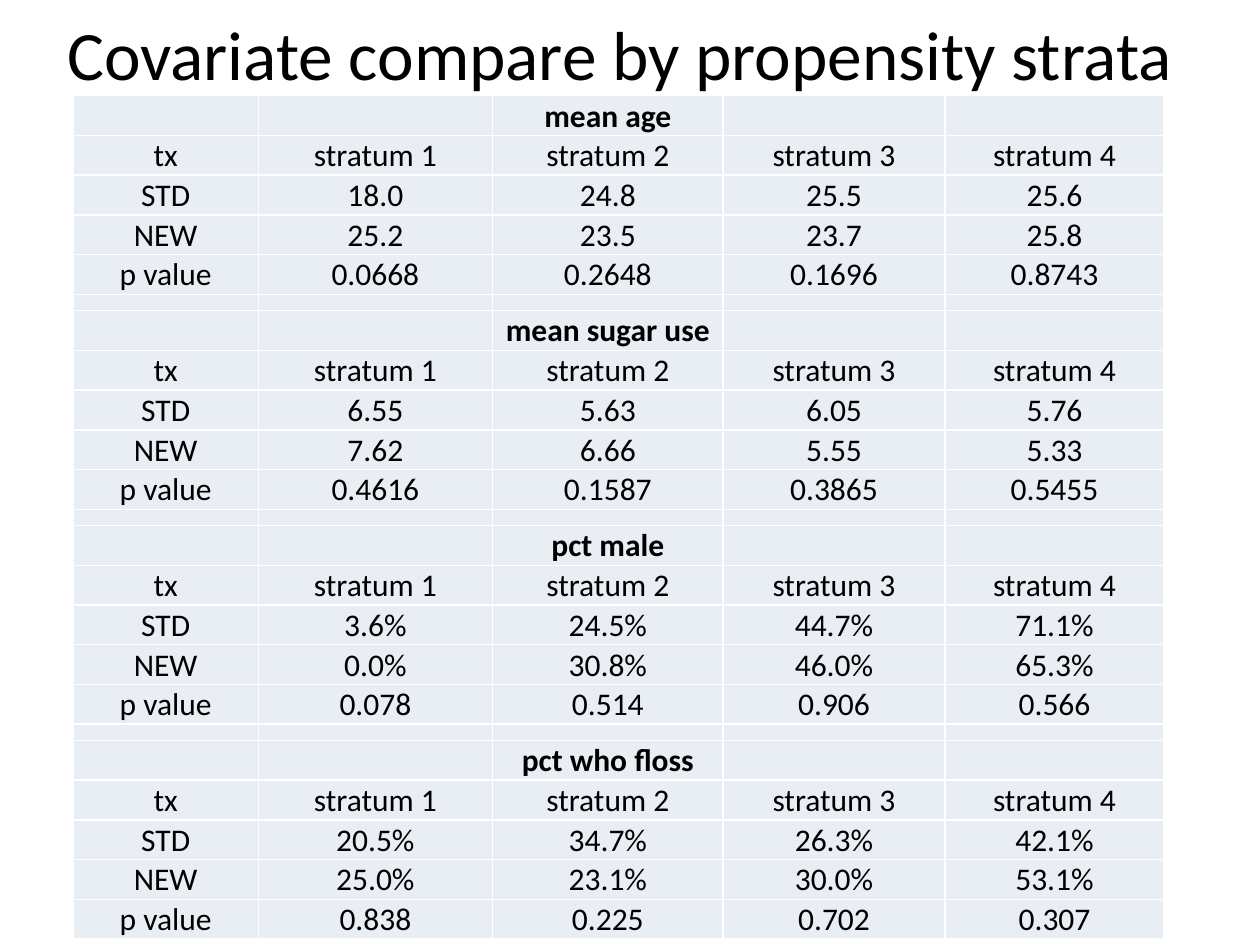
from dataclasses import dataclass

from lxml.etree import SubElement
from pptx import Presentation
from pptx.dml.color import RGBColor
from pptx.enum.text import MSO_ANCHOR, MSO_AUTO_SIZE, PP_ALIGN
from pptx.oxml.ns import qn
from pptx.util import Pt


@dataclass(frozen=True)
class Theme:
    """Colours, font and type sizes of the slide."""
    font: str = "Calibri"
    ink: str = "000000"
    cell: str = "E9EDF4"
    border: str = "FFFFFF"
    title_size: float = 39.6
    body_size: float = 18
    gap_size: float = 7


THEME = Theme()
COLUMN_WIDTHS = (105.84, 133.92, 131.76, 126.72, 125.28)
ROW_HEIGHT = 21.6
GAP_HEIGHTS = (7.92, 5.76, 3.6)
STRATA = ("tx", "stratum 1", "stratum 2", "stratum 3", "stratum 4")
COVARIATES = {
    "mean age": (
        ("STD", "18.0", "24.8", "25.5", "25.6"),
        ("NEW", "25.2", "23.5", "23.7", "25.8"),
        ("p value", "0.0668", "0.2648", "0.1696", "0.8743"),
    ),
    "mean sugar use": (
        ("STD", "6.55", "5.63", "6.05", "5.76"),
        ("NEW", "7.62", "6.66", "5.55", "5.33"),
        ("p value", "0.4616", "0.1587", "0.3865", "0.5455"),
    ),
    "pct male": (
        ("STD", "3.6%", "24.5%", "44.7%", "71.1%"),
        ("NEW", "0.0%", "30.8%", "46.0%", "65.3%"),
        ("p value", "0.078", "0.514", "0.906", "0.566"),
    ),
    "pct who floss": (
        ("STD", "20.5%", "34.7%", "26.3%", "42.1%"),
        ("NEW", "25.0%", "23.1%", "30.0%", "53.1%"),
        ("p value", "0.838", "0.225", "0.702", "0.307"),
    ),
}


def format_paragraph(para, size, bold=False):
    """Centre a paragraph and set its font."""
    para.alignment = PP_ALIGN.CENTER
    para.font.name = THEME.font
    para.font.size = Pt(size)
    para.font.bold = bold
    para.font.color.rgb = RGBColor.from_string(THEME.ink)


def add_title(page, text):
    """Place and fill the title placeholder."""
    title = page.shapes.title
    title.left, title.top, title.width, title.height = Pt(12.24), Pt(12.24), Pt(684), Pt(36)
    frame = title.text_frame
    frame.text = text
    frame.word_wrap = True
    frame.auto_size = MSO_AUTO_SIZE.NONE
    frame.vertical_anchor = MSO_ANCHOR.MIDDLE
    format_paragraph(frame.paragraphs[0], THEME.title_size)


def add_borders(cell):
    """Draw a thin line on all four sides of a cell."""
    properties = cell._tc.get_or_add_tcPr()
    for side in ("a:lnL", "a:lnR", "a:lnT", "a:lnB"):
        line = SubElement(properties, qn(side), w=str(Pt(1)))
        fill = SubElement(line, qn("a:solidFill"))
        SubElement(fill, qn("a:srgbClr"), val=THEME.border)


def fill_cell(cell, text, size, bold):
    """Write and format one table cell."""
    add_borders(cell)
    cell.fill.solid()
    cell.fill.fore_color.rgb = RGBColor.from_string(THEME.cell)
    cell.margin_left = cell.margin_right = cell.margin_top = Pt(0.72)
    cell.margin_bottom = 0
    cell.vertical_anchor = MSO_ANCHOR.BOTTOM
    para = cell.text_frame.paragraphs[0]
    if text:
        para.text = text
    else:
        para._p.get_or_add_endParaRPr().set("sz", str(int(size * 100)))
    format_paragraph(para, size, bold)


def table_rows():
    """List each row as its texts, height, type size and weight."""
    rows = []
    for index, (heading, values) in enumerate(COVARIATES.items()):
        if index:
            rows.append(([""] * 5, GAP_HEIGHTS[index - 1], THEME.gap_size, False))
        rows.append((["", "", heading, "", ""], ROW_HEIGHT, THEME.body_size, True))
        for texts in (STRATA, *values):
            rows.append((texts, ROW_HEIGHT, THEME.body_size, False))
    return rows


def add_covariate_table(page):
    """Add the table that compares treatments within each stratum."""
    rows = table_rows()
    width = sum(COLUMN_WIDTHS)
    height = sum(row[1] for row in rows)
    table = page.shapes.add_table(
        len(rows), len(COLUMN_WIDTHS), Pt(41.76), Pt(54.72), Pt(width), Pt(height)
    ).table
    table.first_row = table.horz_banding = False
    for column, column_width in zip(table.columns, COLUMN_WIDTHS):
        column.width = Pt(column_width)
    for row, (texts, row_height, size, bold) in zip(table.rows, rows):
        row.height = Pt(row_height)
        for cell, text in zip(row.cells, texts):
            fill_cell(cell, text, size, bold)


def main():
    """Build and save the deck."""
    deck = Presentation()
    deck.slide_width, deck.slide_height = Pt(720), Pt(540)
    page = deck.slides.add_slide(deck.slide_layouts[5])
    add_title(page, "Covariate compare by propensity strata")
    add_covariate_table(page)
    deck.save("out.pptx")


if __name__ == "__main__":
    main()
